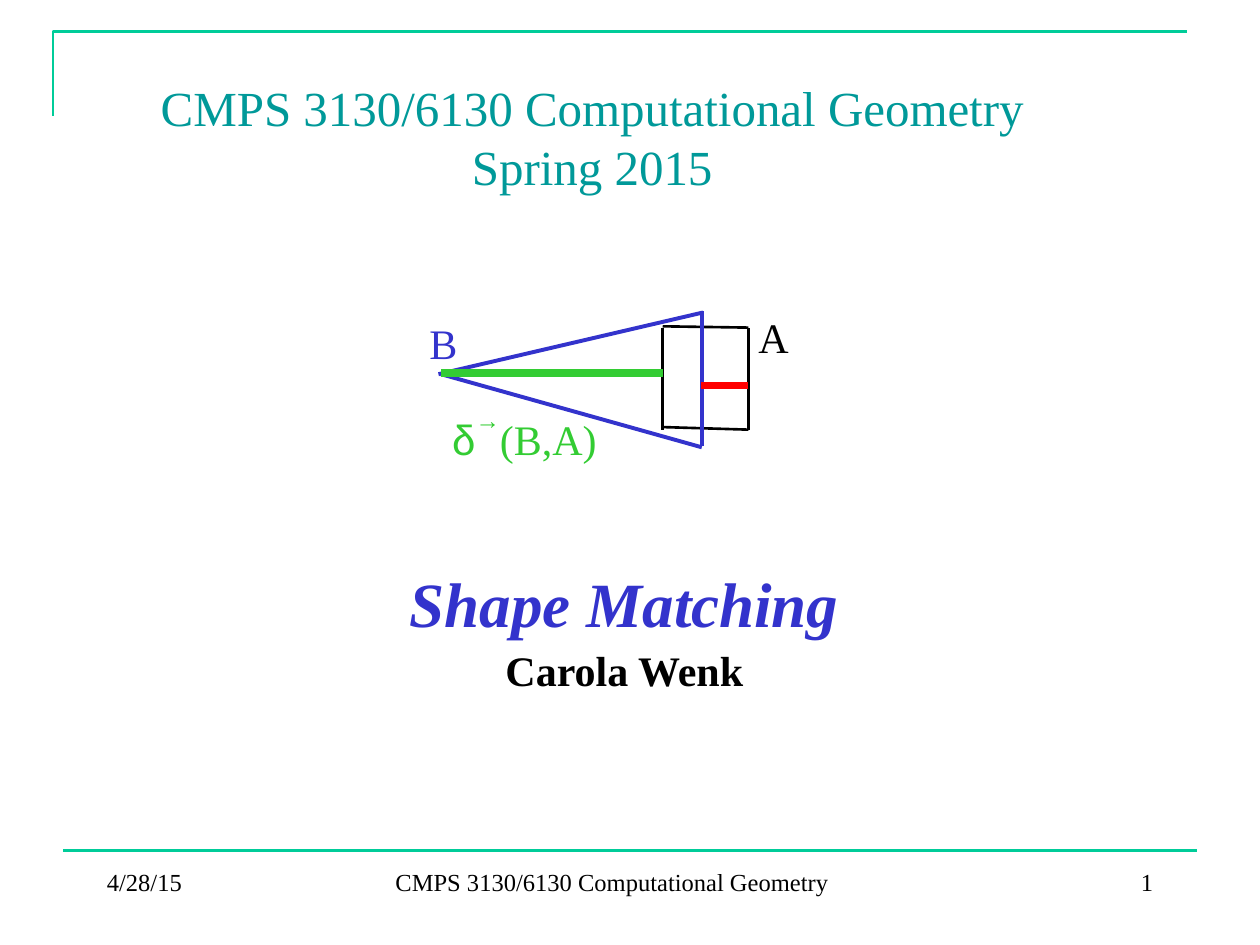
from dataclasses import dataclass

from lxml import etree
from pptx import Presentation
from pptx import util as u
from pptx.dml.color import RGBColor
from pptx.enum import shapes, text
from pptx.oxml import ns


@dataclass(frozen=True)
class Theme:
    serif: str = "Times New Roman"
    sans: str = "Arial"
    ink: str = "000000"
    teal: str = "009999"
    frame: str = "00CC99"
    blue: str = "3333CC"
    green: str = "33CC33"
    red: str = "FF0000"
    topic: int = 36
    heading: int = 28
    label: int = 24
    footer: int = 14
    thin: float = 1.5
    medium: float = 2.25
    thick: float = 4.5


class SlideBuilder:
    """Places elements on a grid of 100 columns and 75 rows."""

    COLUMNS, ROWS = 100, 75

    def __init__(self, deck, theme):
        self.theme = theme
        self.slide = deck.slides.add_slide(deck.slide_layouts[0])
        self.column = deck.slide_width / self.COLUMNS
        self.row = deck.slide_height / self.ROWS

    def grid(self, *lengths):
        """Turn alternating columns and rows into slide lengths."""
        return [round(n * (self.row if i % 2 else self.column))
                for i, n in enumerate(lengths)]

    def format_runs(self, paragraph, size, color, bold=False, italic=False):
        for run in paragraph.runs:
            font = run.font
            font.name, font.size = self.theme.serif, u.Pt(size)
            font.bold, font.italic = bold, italic
            font.color.rgb = RGBColor.from_string(color)

    def placeholder(self, holder, box, content, anchor):
        holder.left, holder.top, holder.width, holder.height = self.grid(*box)
        frame = holder.text_frame
        frame.text = content
        frame.auto_size = text.MSO_AUTO_SIZE.NONE
        frame.vertical_anchor = anchor
        for paragraph in frame.paragraphs:
            paragraph.alignment = text.PP_ALIGN.CENTER
        return frame.paragraphs

    def label(self, box, content, size, color, align=text.PP_ALIGN.LEFT):
        frame = self.slide.shapes.add_textbox(*self.grid(*box)).text_frame
        frame.word_wrap = True
        frame.text = content
        paragraph = frame.paragraphs[0]
        paragraph.alignment = align
        self.format_runs(paragraph, size, color)
        return paragraph

    def distance_label(self, box, symbol, arrow, arguments, color):
        paragraph = self.label(box, symbol, self.theme.label, color)
        for part in (arrow, arguments):
            paragraph.add_run().text = part
        self.format_runs(paragraph, self.theme.label, color)
        symbol_run, arrow_run, _ = paragraph.runs
        symbol_run.font.name = self.theme.sans
        arrow_run._r.get_or_add_rPr().set("baseline", "60000")

    def line(self, start, end, color, weight):
        edge = self.slide.shapes.add_connector(
            shapes.MSO_CONNECTOR.STRAIGHT, *self.grid(*start, *end))
        edge.line.color.rgb = RGBColor.from_string(color)
        edge.line.width = u.Pt(weight)
        etree.SubElement(edge._element.spPr, ns.qn("a:effectLst"))

    def lines(self, ends, color, weight):
        for start, end in ends:
            self.line(start, end, color, weight)

    def open_path(self, points, color, weight):
        corners = [self.grid(*point) for point in points]
        builder = self.slide.shapes.build_freeform(*corners[0])
        builder.add_line_segments(corners[1:], close=False)
        outline = builder.convert_to_shape()
        outline.shadow.inherit = False
        outline.fill.background()
        outline.line.color.rgb = RGBColor.from_string(color)
        outline.line.width = u.Pt(weight)


def main():
    deck = Presentation()
    deck.slide_width, deck.slide_height = u.Inches(10), u.Inches(7.5)
    theme = Theme()
    page = SlideBuilder(deck, theme)

    # Frame lines
    page.open_path([(4.2, 9.2), (4.2, 2.5), (94.2, 2.5)], theme.frame, theme.thin)
    page.line((5, 67.5), (95, 67.5), theme.frame, theme.thin)

    # Footer: date, course, page number
    for left, width, content, align in (
            (7.5, 20.8, "4/28/15", text.PP_ALIGN.LEFT),
            (30.4, 38.7, "CMPS 3130/6130 Computational Geometry", text.PP_ALIGN.LEFT),
            (71.7, 20.8, "1", text.PP_ALIGN.RIGHT)):
        page.label((left, 68.3, width, 5), content, theme.footer, theme.ink, align)

    # Title and subtitle
    title, subtitle = page.slide.placeholders
    course, = page.placeholder(
        title, (2.4, 5.4, 89.2, 10.8),
        "CMPS 3130/6130 Computational Geometry\vSpring 2015",
        text.MSO_ANCHOR.MIDDLE)
    page.format_runs(course, theme.heading, theme.teal)

    topic, lecturer = page.placeholder(
        subtitle, (3.3, 45, 92.5, 16.7), "Shape Matching\nCarola Wenk",
        text.MSO_ANCHOR.TOP)
    page.format_runs(topic, theme.topic, theme.blue, bold=True, italic=True)
    page.format_runs(lecturer, theme.label, theme.ink, bold=True)
    for paragraph, size in ((topic, theme.topic), (lecturer, theme.label)):
        paragraph.line_spacing = 0.9
        paragraph.space_before = u.Pt(round(size * 0.2))

    # Shape A: rectangle drawn edge by edge
    page.lines([((52.6, 26), (52.6, 34.1)), ((52.7, 33.9), (59.4, 34.1)),
                ((59.4, 34.1), (59.4, 26)), ((59.4, 26), (52.6, 25.9))],
               theme.ink, theme.thin)

    # Shape B: triangle drawn edge by edge
    page.lines([((34.8, 29.7), (55.8, 24.8)), ((55.7, 24.7), (55.7, 35.4)),
                ((55.7, 35.5), (35, 29.7))], theme.blue, theme.medium)

    page.label((59.2, 24.2, 4.7, 5), "A", theme.label, theme.ink)
    page.label((33.1, 24.7, 4.7, 5), "B", theme.label, theme.blue)

    # Directed distances between the shapes
    page.line((59.4, 30.6), (55.6, 30.6), theme.red, theme.thick)
    page.line((35, 29.6), (52.6, 29.6), theme.green, theme.thick)
    page.distance_label((34.9, 31.7, 14.9, 5), "δ", "→", "(B,A)", theme.green)

    deck.save("out.pptx")


if __name__ == "__main__":
    main()
